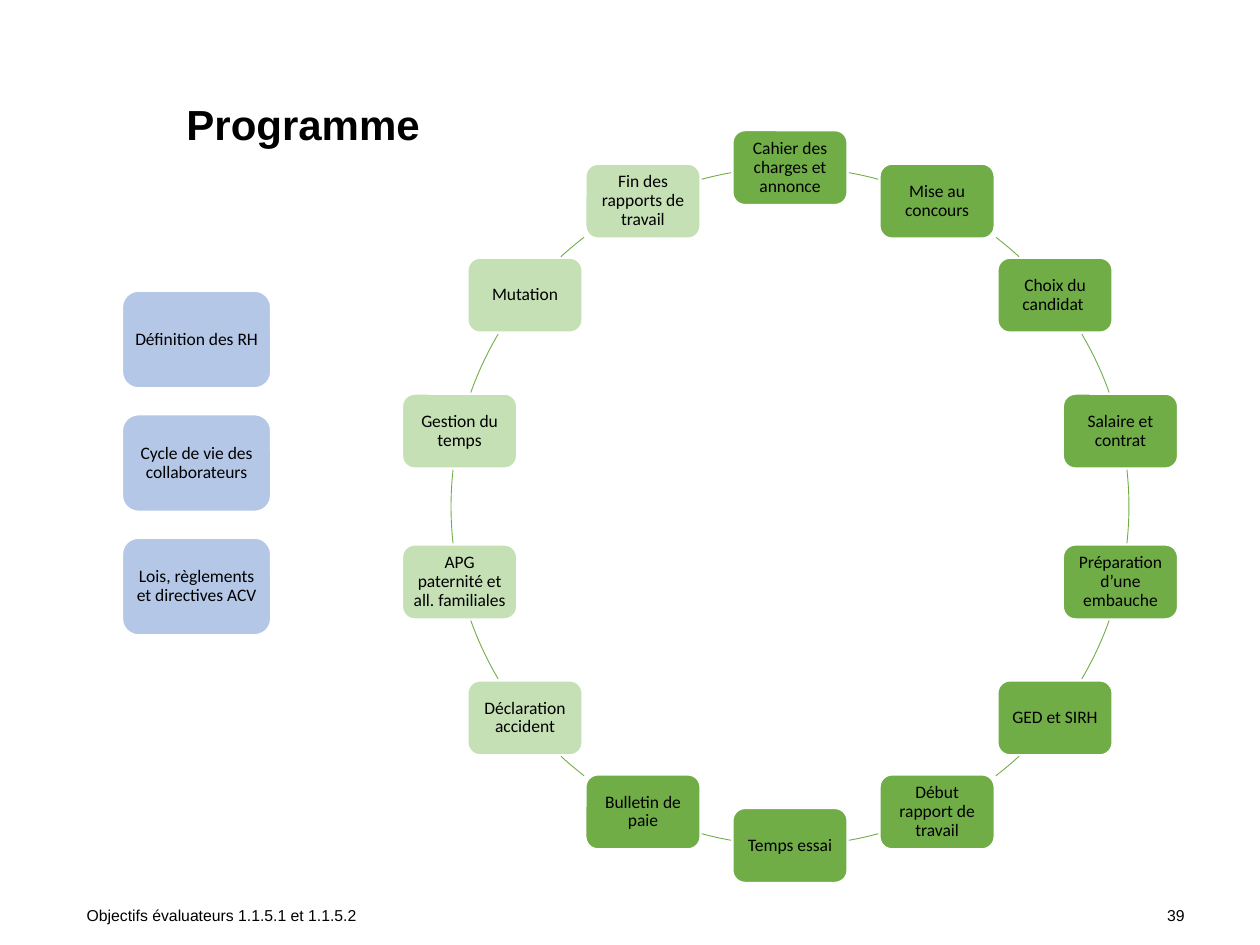
import math

from pptx import Presentation
from pptx.dml.color import RGBColor
from pptx.enum import shapes, text
from pptx.util import Inches, Pt

COLORS = {"green": "70AD47", "light": "C5E0B4", "blue": "B4C7E7",
          "black": "000000", "white": "FFFFFF"}
CENTER_X, CENTER_Y, RADIUS = 6.27, 4.02, 2.69
NODE_W, NODE_H = 0.91, 0.59
GAP = 0.01

STEPS = [
    ("Cahier des charges et annonce", "green"),
    ("Mise au concours", "green"),
    ("Choix du candidat ", "green"),
    ("Salaire et contrat", "green"),
    ("Préparation d’une embauche", "green"),
    ("GED et SIRH", "green"),
    ("Début rapport de travail", "green"),
    ("Temps essai", "green"),
    ("Bulletin de paie", "green"),
    ("Déclaration accident", "light"),
    ("APG paternité et all. familiales", "light"),
    ("Gestion du temps", "light"),
    ("Mutation", "light"),
    ("Fin des rapports de travail", "light"),
]
TOPICS = ["Définition des RH", "Cycle de vie des collaborateurs",
          "Lois, règlements et directives ACV"]


def rgb(name):
    return RGBColor.from_string(COLORS[name])


def add_run(p, content, size, font, bold=False):
    r = p.add_run()
    r.text = content
    r.font.size = Pt(size)
    r.font.name = font
    r.font.bold = bold
    r.font.color.rgb = rgb("black")


def add_title(s, content):
    sp = s.shapes.title
    sp.left, sp.top, sp.width, sp.height = map(Inches, (1.38, 0.6, 8.12, 0.77))
    tf = sp.text_frame
    tf.auto_size = text.MSO_AUTO_SIZE.NONE
    tf.vertical_anchor = text.MSO_ANCHOR.MIDDLE
    p = tf.paragraphs[0]
    p.alignment = text.PP_ALIGN.LEFT
    add_run(p, content, 24, "Arial", bold=True)


def add_footer(s, content, left, width, align):
    sp = s.shapes.add_textbox(Inches(left), Inches(7.14), Inches(width), Inches(0.22))
    tf = sp.text_frame
    tf.word_wrap = True
    p = tf.paragraphs[0]
    p.alignment = align
    add_run(p, content, 9, "Arial")


def add_box(s, content, left, top, width, height, color):
    sp = s.shapes.add_shape(shapes.MSO_SHAPE.ROUNDED_RECTANGLE, Inches(left),
                            Inches(top), Inches(width), Inches(height))
    sp.shadow.inherit = False
    sp.fill.solid()
    sp.fill.fore_color.rgb = rgb(color)
    sp.line.color.rgb = rgb("white")
    sp.line.width = Pt(1)
    tf = sp.text_frame
    tf.word_wrap = True
    tf.vertical_anchor = text.MSO_ANCHOR.MIDDLE
    tf.margin_left = tf.margin_right = tf.margin_top = tf.margin_bottom = Inches(0.04)
    p = tf.paragraphs[0]
    p.alignment = text.PP_ALIGN.CENTER
    p.line_spacing = 0.9
    add_run(p, content, 10, "Calibri")


def on_circle(angle):
    """Offset from the cycle's centre, with the angle in degrees clockwise."""
    a = math.radians(angle)
    return RADIUS * math.cos(a), RADIUS * math.sin(a)


def leave_angle(node, direction):
    """Angle at which the circle comes out of the box centred at node."""
    x, y = on_circle(node)
    angle = node
    while True:
        px, py = on_circle(angle)
        if abs(px - x) > NODE_W / 2 + GAP or abs(py - y) > NODE_H / 2 + GAP:
            return angle
        angle += direction * 0.1


def add_arc(s, start, end):
    sp = s.shapes.add_shape(shapes.MSO_SHAPE.ARC, Inches(CENTER_X - RADIUS),
                            Inches(CENTER_Y - RADIUS), Inches(2 * RADIUS),
                            Inches(2 * RADIUS))
    sp.shadow.inherit = False
    sp.fill.background()
    sp.line.color.rgb = rgb("green")
    sp.line.width = Pt(0.5)
    # Angles are stored in 1/60000 degree, adjustments in 1/100000.
    sp.adjustments[0] = start % 360 * 0.6
    sp.adjustments[1] = end % 360 * 0.6


def add_cycle(s):
    step = 360 / len(STEPS)
    for i, (label, color) in enumerate(STEPS):
        angle = -90 + i * step
        x, y = on_circle(angle)
        add_box(s, label, CENTER_X + x - NODE_W / 2, CENTER_Y + y - NODE_H / 2,
                NODE_W, NODE_H, color)
        add_arc(s, leave_angle(angle, 1), leave_angle(angle + step, -1))


def main():
    prs = Presentation()
    prs.slide_width, prs.slide_height = Inches(10), Inches(7.5)
    s = prs.slides.add_slide(prs.slide_layouts[5])
    add_title(s, "Programme")
    add_cycle(s)
    for i, topic in enumerate(TOPICS):
        add_box(s, topic, 0.97, 2.31 + i * 0.98, 1.18, 0.77, "blue")
    add_footer(s, "Objectifs évaluateurs 1.1.5.1 et 1.1.5.2", 0.59, 5.67,
               text.PP_ALIGN.LEFT)
    add_footer(s, "39", 9.02, 0.48, text.PP_ALIGN.RIGHT)
    prs.save("out.pptx")


if __name__ == "__main__":
    main()
